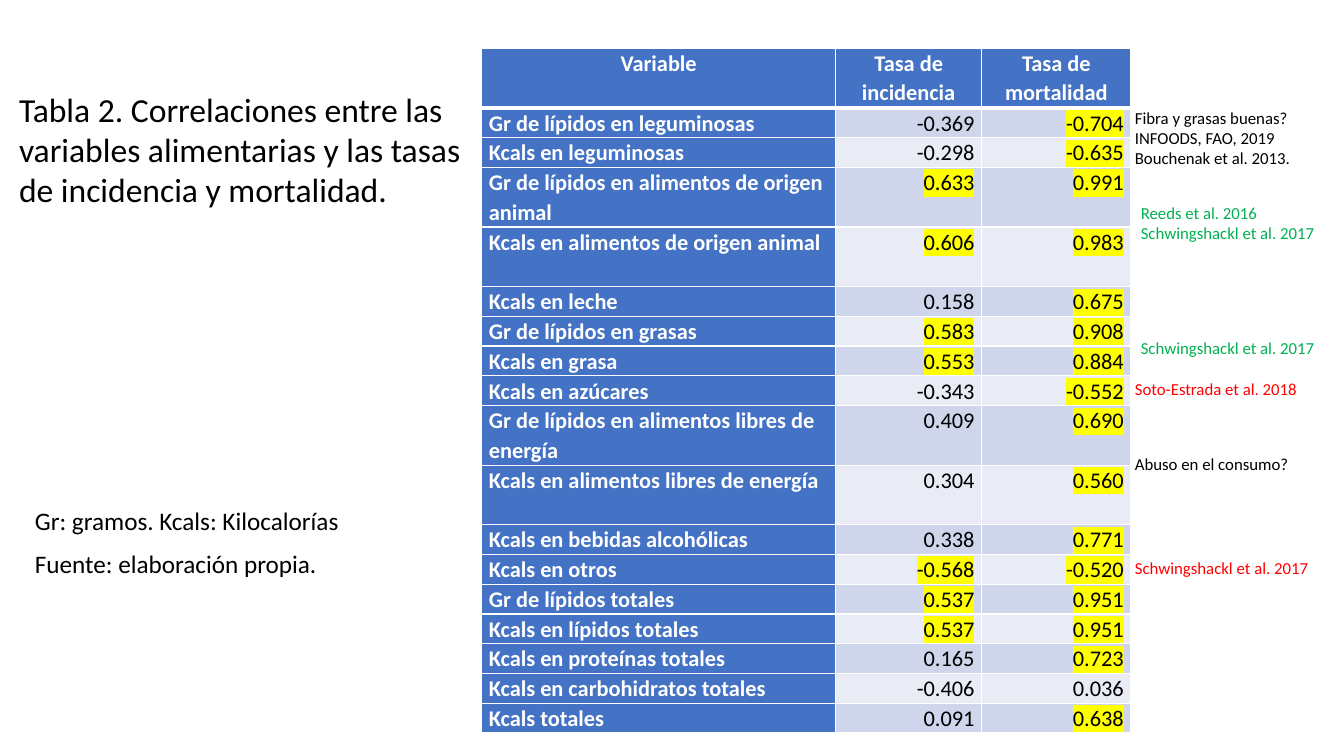
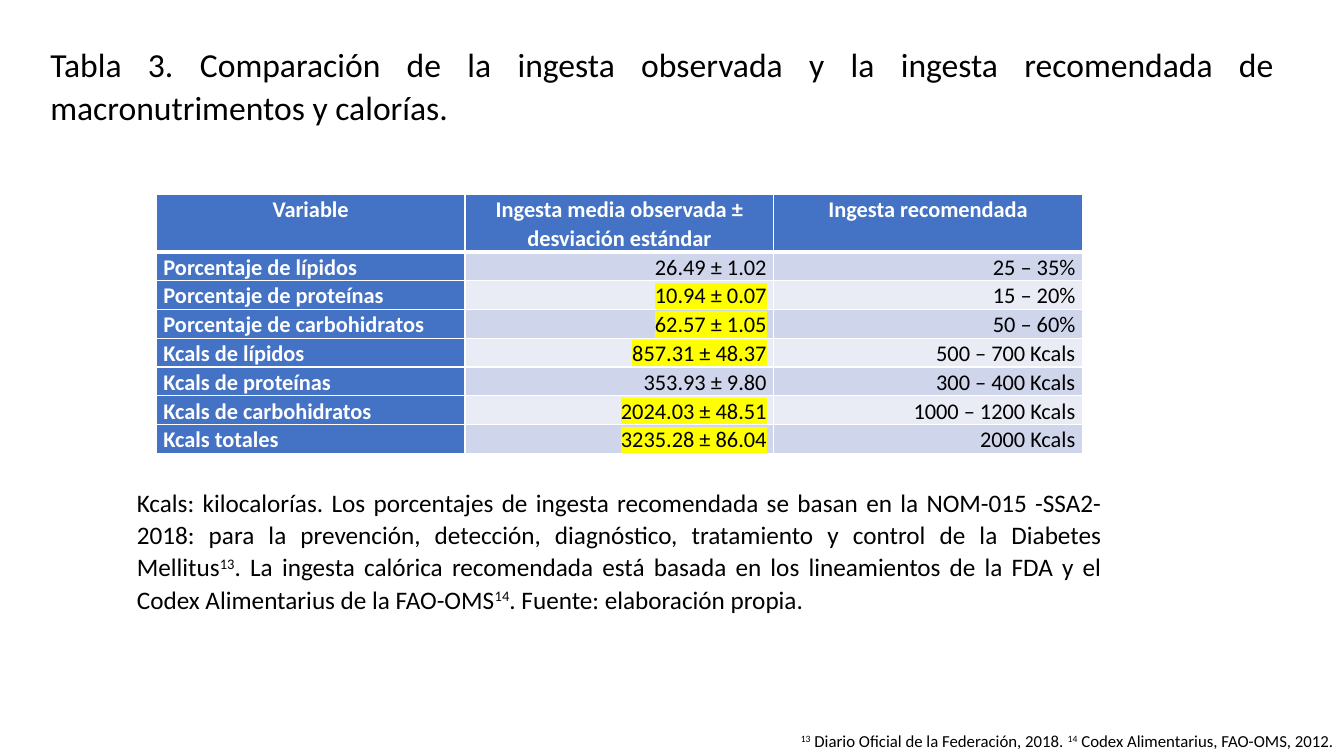
import dataclasses
import typing

import lxml.etree
import pptx
import pptx.dml.color
import pptx.enum.text
import pptx.oxml.ns
import pptx.slide
import pptx.text.text
import pptx.util

Cm = pptx.util.Cm
Pt = pptx.util.Pt
RGB = pptx.dml.color.RGBColor
Align = pptx.enum.text.PP_ALIGN
qn = pptx.oxml.ns.qn

BLACK = RGB(0x00, 0x00, 0x00)
WHITE = RGB(0xFF, 0xFF, 0xFF)
BLUE = RGB(0x44, 0x72, 0xC4)
BANDS = (RGB(0xCF, 0xD5, 0xEA), RGB(0xE9, 0xEB, 0xF5))
GREEN = RGB(0x00, 0xB0, 0x50)
RED = RGB(0xFF, 0x00, 0x00)
YELLOW = RGB(0xFF, 0xFF, 0x00)

FONT = "Calibri"
TITLE, BODY, CELL, SMALL = 24, 18, 16, 12
LOOSE = {"line_spacing": 1.07, "space_after": Pt(8)}
FULL = LOOSE | {"alignment": Align.JUSTIFY}
INSET = {"margin_left": Cm(0.18), "margin_right": Cm(0.18),
         "margin_top": 0, "margin_bottom": 0}
STRONG = 0.5


@dataclasses.dataclass(frozen=True)
class Note:
    """A text box; each line is a paragraph, and ^marks^ enclose superscripts."""
    box: tuple[float, float, float, float]
    lines: tuple[str, ...]
    size: int = SMALL
    color: RGB = BLACK
    form: dict[str, typing.Any] = dataclasses.field(default_factory=dict)


@dataclasses.dataclass(frozen=True)
class Grid:
    """A table whose tall rows take two units of height; hot values are highlighted."""
    left: float
    top: float
    cols: tuple[float, ...]
    unit: float
    rows: tuple[tuple[str, ...], ...]
    tall: frozenset[int]
    hot: frozenset[str]


def apply(item: typing.Any, form: dict[str, typing.Any]) -> None:
    for key, val in form.items():
        setattr(item, key, val)


def write(para: pptx.text.text._Paragraph, text: str, size: int, color: RGB,
          form: dict[str, typing.Any], bold: bool = False, hot: bool = False) -> None:
    apply(para, form)
    for num, part in enumerate(text.split("^")):
        if not part:
            continue
        run = para.add_run()
        run.text = part
        apply(run.font, {"name": FONT, "size": Pt(size), "bold": bold})
        run.font.color.rgb = color
        props = run._r.get_or_add_rPr()
        if num % 2:
            props.set("baseline", "30000")
        if hot:
            mark = lxml.etree.Element(qn("a:highlight"))
            lxml.etree.SubElement(mark, qn("a:srgbClr"), val=str(YELLOW))
            props.find(qn("a:solidFill")).addnext(mark)


def add_note(slide: pptx.slide.Slide, note: Note) -> None:
    frame = slide.shapes.add_textbox(*map(Cm, note.box)).text_frame
    apply(frame, {"word_wrap": True,
                  "auto_size": pptx.enum.text.MSO_AUTO_SIZE.SHAPE_TO_FIT_TEXT})
    for num, line in enumerate(note.lines):
        para = frame.add_paragraph() if num else frame.paragraphs[0]
        write(para, line, note.size, note.color, note.form)


def add_edges(cell: typing.Any, row: int) -> None:
    """White cell borders, thick between the header and the body."""
    wide = {"T": row == 1, "B": row == 0}
    props = cell._tc.get_or_add_tcPr()
    for num, side in enumerate("LRTB"):
        line = lxml.etree.Element(qn(f"a:ln{side}"),
                                  w=str(Pt(3 if wide.get(side) else 1)))
        fill = lxml.etree.SubElement(line, qn("a:solidFill"))
        lxml.etree.SubElement(fill, qn("a:srgbClr"), val=str(WHITE))
        props.insert(num, line)


def add_grid(slide: pptx.slide.Slide, grid: Grid) -> None:
    highs = [grid.unit * (2 if row in grid.tall else 1) for row in range(len(grid.rows))]
    table = slide.shapes.add_table(
        len(grid.rows), len(grid.cols), Cm(grid.left), Cm(grid.top),
        Cm(sum(grid.cols)), Cm(sum(highs))).table
    for col, width in zip(table.columns, grid.cols):
        col.width = Cm(width)
    for row, (high, texts) in enumerate(zip(highs, grid.rows)):
        table.rows[row].height = Cm(high)
        for col, text in enumerate(texts):
            cell = table.cell(row, col)
            apply(cell, INSET)
            head = row == 0 or col == 0
            cell.fill.solid()
            cell.fill.fore_color.rgb = BLUE if head else BANDS[(row - 1) % 2]
            add_edges(cell, row)
            side = Align.CENTER if row == 0 else Align.RIGHT if col else Align.LEFT
            write(cell.text_frame.paragraphs[0], text, CELL, WHITE if head else BLACK,
                  LOOSE | {"alignment": side}, head, text in grid.hot)


RATES = (
    ("Gr de lípidos en leguminosas", "-0.369", "-0.704"),
    ("Kcals en leguminosas", "-0.298", "-0.635"),
    ("Gr de lípidos en alimentos de origen animal", "0.633", "0.991"),
    ("Kcals en alimentos de origen animal", "0.606", "0.983"),
    ("Kcals en leche", "0.158", "0.675"),
    ("Gr de lípidos en grasas", "0.583", "0.908"),
    ("Kcals en grasa", "0.553", "0.884"),
    ("Kcals en azúcares", "-0.343", "-0.552"),
    ("Gr de lípidos en alimentos libres de energía", "0.409", "0.690"),
    ("Kcals en alimentos libres de energía", "0.304", "0.560"),
    ("Kcals en bebidas alcohólicas", "0.338", "0.771"),
    ("Kcals en otros", "-0.568", "-0.520"),
    ("Gr de lípidos totales", "0.537", "0.951"),
    ("Kcals en lípidos totales", "0.537", "0.951"),
    ("Kcals en proteínas totales", "0.165", "0.723"),
    ("Kcals en carbohidratos totales", "-0.406", "0.036"),
    ("Kcals totales", "0.091", "0.638"),
)
LINKS = Grid(
    12.14, 1.22, (8.92, 3.68, 3.76), 0.75,
    (("Variable", "Tasa de incidencia", "Tasa de mortalidad"),) + RATES,
    frozenset({0, 3, 4, 9, 10}),
    frozenset(val for row in RATES for val in row[1:] if abs(float(val)) >= STRONG))

INTAKE = Grid(
    3.94, 4.9, (7.78,) * 3, 0.72,
    (("Variable", "Ingesta media observada ± desviación estándar", "Ingesta recomendada"),
     ("Porcentaje de lípidos", "26.49 ± 1.02", "25 – 35%"),
     ("Porcentaje de proteínas", "10.94 ± 0.07", "15 – 20%"),
     ("Porcentaje de carbohidratos", "62.57 ± 1.05", "50 – 60%"),
     ("Kcals de lípidos", "857.31 ± 48.37", "500 – 700 Kcals"),
     ("Kcals de proteínas", "353.93 ± 9.80", "300 – 400 Kcals"),
     ("Kcals de carbohidratos", "2024.03 ± 48.51", "1000 – 1200 Kcals"),
     ("Kcals totales", "3235.28 ± 86.04", "2000 Kcals")),
    frozenset({0}),
    frozenset({"10.94 ± 0.07", "62.57 ± 1.05", "857.31 ± 48.37",
               "2024.03 ± 48.51", "3235.28 ± 86.04"}))

NEAR, FAR = 28.35, 28.5
PAGES = (
    (LINKS, (
        Note((0.23, 2.11, 11.91, 3.33),
             ("Tabla 2. Correlaciones entre las variables alimentarias y las tasas "
              "de incidencia y mortalidad.",), TITLE),
        Note((0.63, 12.55, 8.56, 2.16),
             ("Gr: gramos. Kcals: Kilocalorías", "Fuente: elaboración propia."),
             BODY, form=LOOSE),
        Note((NEAR, 2.59, 4.7, 1.8),
             ("Fibra y grasas buenas? INFOODS, FAO, 2019 Bouchenak et al. 2013.",)),
        Note((FAR, 4.98, 5.33, 1.27),
             ("Reeds et al. 2016", "Schwingshackl et al. 2017"), color=GREEN),
        Note((FAR, 8.38, 5.08, 0.76), ("Schwingshackl et al. 2017",), color=GREEN),
        Note((NEAR, 9.42, 5.08, 0.76), ("Soto-Estrada et al. 2018",), color=RED),
        Note((NEAR, 11.3, 4.55, 0.76), ("Abuso en el consumo?",)),
        Note((NEAR, 13.92, 5.08, 0.76), ("Schwingshackl et al. 2017",), color=RED),
    )),
    (INTAKE, (
        Note((1.02, 0.91, 31.34, 2.41),
             ("Tabla 3. Comparación de la ingesta observada y la ingesta recomendada "
              "de macronutrimentos y calorías.",),
             TITLE, form=FULL | {"space_before": Pt(12)}),
        Note((3.2, 12.09, 24.82, 3.51),
             ("Kcals: kilocalorías. Los porcentajes de ingesta recomendada se basan en "
              "la NOM-015 -SSA2-2018: para la prevención, detección, diagnóstico, "
              "tratamiento y control de la Diabetes Mellitus^13^. La ingesta calórica "
              "recomendada está basada en los lineamientos de la FDA y el Codex "
              "Alimentarius de la FAO-OMS^14^. Fuente: elaboración propia.",),
             BODY, form=FULL),
        Note((16.64, 18.29, 17.22, 0.76),
             ("^13^ Diario Oficial de la Federación, 2018. "
              "^14^ Codex Alimentarius, FAO-OMS, 2012.",),
             form={"alignment": Align.RIGHT}),
    )),
)


def main() -> None:
    deck = pptx.Presentation()
    apply(deck, {"slide_width": Cm(33.87), "slide_height": Cm(19.05)})
    for grid, notes in PAGES:
        slide = deck.slides.add_slide(deck.slide_layouts[6])
        add_grid(slide, grid)
        for note in notes:
            add_note(slide, note)
    deck.save("out.pptx")


if __name__ == "__main__":
    main()
